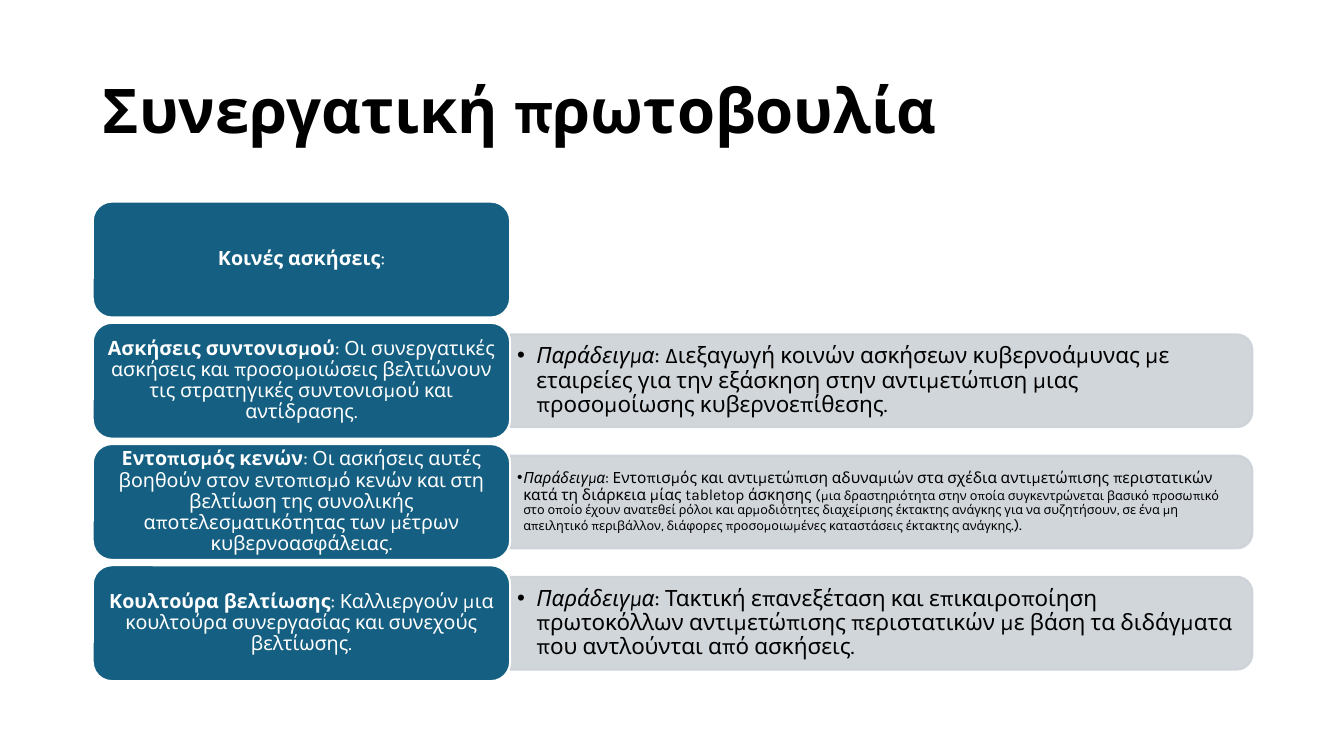
from lxml.etree import SubElement
from pptx import Presentation
from pptx.dml.color import RGBColor
from pptx.enum.shapes import MSO_SHAPE
from pptx.enum.text import MSO_ANCHOR, PP_ALIGN
from pptx.oxml.ns import qn
from pptx.util import Inches, Pt

FONT = "Karla"
COLOURS = {"card": "156082", "bar": "CCD2D8", "white": "FFFFFF", "black": "000000"}

# Each row: card heading, card text, bullet indent, example runs (text, size, italic)
ROWS = [
    ("Κοινές ασκήσεις", ":", 0, []),
    ("Ασκήσεις συντονισμού",
     ": Οι συνεργατικές ασκήσεις και προσομοιώσεις βελτιώνουν τις στρατηγικές "
     "συντονισμού και αντίδρασης.",
     0.19,
     [("Παράδειγμα", 16, True),
      (": Διεξαγωγή κοινών ασκήσεων κυβερνοάμυνας με εταιρείες για την εξάσκηση στην "
       "αντιμετώπιση μιας προσομοίωσης κυβερνοεπίθεσης.", 16, False)]),
    ("Εντοπισμός κενών",
     ": Οι ασκήσεις αυτές βοηθούν στον εντοπισμό κενών και στη βελτίωση της συνολικής "
     "αποτελεσματικότητας των μέτρων κυβερνοασφάλειας.",
     0.06,
     [("Παράδειγμα", 11, True),
      (": Εντοπισμός και αντιμετώπιση αδυναμιών στα σχέδια αντιμετώπισης περιστατικών "
       "κατά τη διάρκεια μίας tabletop άσκησης (", 11, False),
      ("μια δραστηριότητα στην οποία συγκεντρώνεται βασικό προσωπικό στο οποίο έχουν "
       "ανατεθεί ρόλοι και αρμοδιότητες διαχείρισης έκτακτης ανάγκης για να συζητήσουν, "
       "σε ένα μη απειλητικό περιβάλλον, διάφορες προσομοιωμένες καταστάσεις έκτακτης "
       "ανάγκης", 9, False),
      (".).", 11, False)]),
    ("Κουλτούρα βελτίωσης",
     ": Καλλιεργούν μια κουλτούρα συνεργασίας και συνεχούς βελτίωσης.",
     0.19,
     [("Παράδειγμα", 16, True),
      (": Τακτική επανεξέταση και επικαιροποίηση πρωτοκόλλων αντιμετώπισης περιστατικών "
       "με βάση τα διδάγματα που αντλούνται από ασκήσεις.", 16, False)]),
]


def colour(name):
    return RGBColor.from_string(COLOURS[name])


def add_text_box(slide, left, top, width, height, inset_x, inset_y):
    """Add a wrapped, vertically centred text box and return its paragraph."""
    box = slide.shapes.add_textbox(Inches(left), Inches(top), Inches(width), Inches(height))
    frame = box.text_frame
    frame.word_wrap = True
    frame.vertical_anchor = MSO_ANCHOR.MIDDLE
    frame.margin_left = frame.margin_right = Inches(inset_x)
    frame.margin_top = frame.margin_bottom = Inches(inset_y)
    paragraph = frame.paragraphs[0]
    paragraph.line_spacing = 0.9
    return paragraph


def add_run(paragraph, text, size, colour_name, bold=False, italic=False):
    run = paragraph.add_run()
    run.text = text
    run.font.name = FONT
    run.font.size = Pt(size)
    run.font.bold = bold
    run.font.italic = italic
    run.font.color.rgb = colour(colour_name)


def add_panel(slide, kind, left, top, width, height, fill, line):
    shape = slide.shapes.add_shape(
        kind, Inches(left), Inches(top), Inches(width), Inches(height))
    shape.shadow.inherit = False
    shape.fill.solid()
    shape.fill.fore_color.rgb = colour(fill)
    shape.line.color.rgb = colour(line)
    shape.line.width = Pt(1.5)
    return shape


def add_bullet(paragraph, indent):
    properties = paragraph._p.get_or_add_pPr()
    properties.set("marL", str(Inches(indent)))
    properties.set("indent", str(-Inches(indent)))
    SubElement(properties, qn("a:buFont"), typeface="Arial")
    SubElement(properties, qn("a:buChar"), char="•")


def add_title(slide, left, top, width, height):
    paragraph = add_text_box(slide, left, top, width, height, 0.1, 0.05)
    add_run(paragraph, "Συνεργατική πρωτοβουλία", 44, "black", bold=True)


def add_card(slide, left, top, width, height, heading, text):
    add_panel(slide, MSO_SHAPE.ROUNDED_RECTANGLE, left, top, width, height, "card", "white")
    margin = 0.06
    paragraph = add_text_box(slide, left + margin, top + margin, width - 2 * margin,
                             height - 2 * margin, 0.06, 0.03)
    paragraph.alignment = PP_ALIGN.CENTER
    add_run(paragraph, heading, 14, "white", bold=True)
    add_run(paragraph, text, 14, "white")


def add_example(slide, left, top, width, height, indent, runs):
    # A tall shape turned a quarter, so that its rounded end faces right
    bar = add_panel(slide, MSO_SHAPE.ROUND_2_SAME_RECTANGLE,
                    left + (width - height) / 2, top + (height - width) / 2,
                    height, width, "bar", "bar")
    bar.rotation = 90
    for element in bar._element.spPr.iter(qn("a:srgbClr")):
        SubElement(element, qn("a:alpha"), val="90000")

    paragraph = add_text_box(slide, left, top + 0.05, width - 0.04, height - 0.1, 0.07, 0.03)
    add_bullet(paragraph, indent)
    for text, size, italic in runs:
        add_run(paragraph, text, size, "black", italic=italic)


def add_rows(slide, left, top, width, height):
    card_width, card_height, bar_height, gap = 4.14, 1.15, 0.92, 0.05
    pitch = (height + gap) / len(ROWS)
    for index, (heading, text, indent, runs) in enumerate(ROWS):
        row_top = top + index * pitch
        if runs:
            add_example(slide, left + card_width, row_top + (card_height - bar_height) / 2,
                        width - card_width, bar_height, indent, runs)
        add_card(slide, left, row_top, card_width, card_height, heading, text)


def main():
    presentation = Presentation()
    presentation.slide_width = Inches(13.33)
    presentation.slide_height = Inches(7.5)
    slide = presentation.slides.add_slide(presentation.slide_layouts[6])
    add_title(slide, 0.92, 0.4, 11.5, 1.45)
    add_rows(slide, 0.92, 2, 11.5, 4.76)
    presentation.save("out.pptx")


if __name__ == "__main__":
    main()
